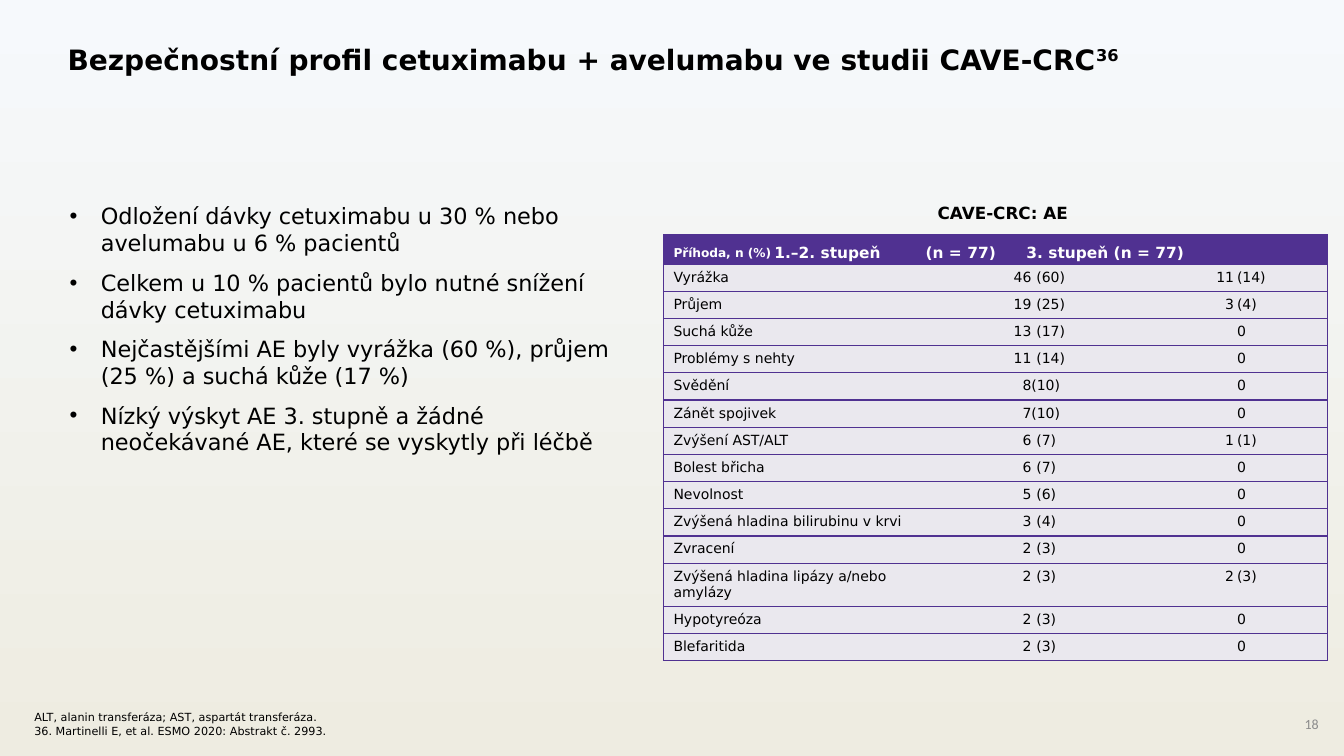
from lxml import etree
from pptx import Presentation
from pptx import util as u
from pptx.dml.color import RGBColor
from pptx.enum import text
from pptx.oxml import ns

PX = 9144
FONT = "DejaVu Sans"
BLACK = RGBColor(0x00, 0x00, 0x00)
WHITE = RGBColor(0xFF, 0xFF, 0xFF)
GREY = RGBColor(0x8C, 0x8C, 0x8C)
PURPLE = RGBColor(0x50, 0x31, 0x91)
LILAC = RGBColor(0xEA, 0xE8, 0xEE)
SKY = RGBColor(0xF6, 0xF9, 0xFC)
SAND = RGBColor(0xEE, 0xEC, 0xE1)
NO_STYLE = "{2D5ABB26-0587-4C30-8999-92F81FD0307C}"

TITLE = "Bezpečnostní profil cetuximabu + avelumabu ve studii CAVE-CRC"
FINDINGS = [
    "Odložení dávky cetuximabu u 30 % nebo avelumabu u 6 % pacientů",
    "Celkem u 10 % pacientů bylo nutné snížení dávky cetuximabu",
    "Nejčastějšími AE byly vyrážka (60 %), průjem (25 %) a suchá kůže (17 %)",
    "Nízký výskyt AE 3. stupně a žádné neočekávané AE, které se vyskytly při léčbě",
]
FOOTNOTES = [
    "ALT, alanin transferáza; AST, aspartát transferáza.",
    "36. Martinelli E, et al. ESMO 2020: Abstrakt č. 2993.",
]
EVENTS = [
    ("Vyrážka", "46", "(60)", "11", "(14)"),
    ("Průjem", "19", "(25)", "3", "(4)"),
    ("Suchá kůže", "13", "(17)", "", "0"),
    ("Problémy s nehty", "11", "(14)", "", "0"),
    ("Svědění", "8", "(10)", "", "0"),
    ("Zánět spojivek", "7", "(10)", "", "0"),
    ("Zvýšení AST/ALT", "6", "(7)", "1", "(1)"),
    ("Bolest břicha", "6", "(7)", "", "0"),
    ("Nevolnost", "5", "(6)", "", "0"),
    ("Zvýšená hladina bilirubinu v krvi", "3", "(4)", "", "0"),
    ("Zvracení", "2", "(3)", "", "0"),
    ("Zvýšená hladina lipázy a/nebo amylázy", "2", "(3)", "2", "(3)"),
    ("Hypotyreóza", "2", "(3)", "", "0"),
    ("Blefaritida", "2", "(3)", "", "0"),
]
COLUMN_WIDTHS = [271, 94, 109, 92, 93]
COLUMN_INDENTS = [10, 0, 5, 0, 3]
HEADER_HEIGHT, ROW_HEIGHT, TALL_ROW_HEIGHT = 28, 27, 43
TALL_EVENT = 11


def px(length):
    return u.Emu(length * PX)


def write(paragraph, words, size=10, bold=False, color=BLACK, font=FONT,
          baseline=0, align=text.PP_ALIGN.LEFT, before=0, indent=0, hanging=0):
    paragraph.alignment = align
    paragraph.space_before = u.Pt(before)
    properties = paragraph._p.get_or_add_pPr()
    properties.set("marL", str(px(indent)))
    properties.set("indent", str(px(-hanging)))
    if not words:
        paragraph._p.get_or_add_endParaRPr().set("sz", str(size * 100))
        return
    run = paragraph.add_run()
    run.text = words
    run.font.size = u.Pt(size)
    run.font.bold = bold
    run.font.name = font
    run.font.color.rgb = color
    if baseline:
        run.font._element.set("baseline", str(baseline * 1000))


def write_lines(frame, lines, first_before=1, before=0, **style):
    for index, line in enumerate(lines):
        paragraph = frame.add_paragraph() if index else frame.paragraphs[0]
        write(paragraph, line, before=before if index else first_before, **style)


def set_tabs(paragraph, stops):
    tabs = etree.SubElement(paragraph._p.get_or_add_pPr(), ns.qn("a:tabLst"))
    for position, side in stops:
        etree.SubElement(tabs, ns.qn("a:tab"), pos=str(px(position)), algn=side)


def place(shape, left, top, width, height):
    shape.left, shape.top = px(left), px(top)
    shape.width, shape.height = px(width), px(height)
    frame = shape.text_frame
    frame.margin_left = frame.margin_right = frame.margin_bottom = 0
    frame.margin_top = px(1)
    frame.word_wrap = True
    frame.vertical_anchor = text.MSO_ANCHOR.TOP
    frame.auto_size = text.MSO_AUTO_SIZE.SHAPE_TO_FIT_TEXT
    return frame


def add_label(slide, left, top, width, height, lines, **style):
    frame = place(slide.shapes.add_textbox(0, 0, 0, 0), left, top, width, height)
    write_lines(frame, lines, **style)


def style_cell(cell, fill):
    cell.margin_left = cell.margin_right = cell.margin_bottom = 0
    cell.margin_top = px(5)
    cell.fill.solid()
    cell.fill.fore_color.rgb = fill


def add_borders(cell, sides):
    properties = cell._tc.get_or_add_tcPr()
    for index, side in enumerate(sides):
        line = etree.Element(ns.qn(f"a:ln{side}"), w=str(u.Pt(1)))
        fill = etree.SubElement(line, ns.qn("a:solidFill"))
        etree.SubElement(fill, ns.qn("a:srgbClr"), val=str(PURPLE))
        properties.insert(index, line)


def add_header(table):
    header = table.cell(0, 0)
    header.merge(table.cell(0, 4))
    style_cell(header, PURPLE)
    paragraph = header.text_frame.paragraphs[0]
    style = dict(bold=True, color=WHITE, before=3.5, indent=10)
    write(paragraph, "Příhoda, n (%)\t", size=15, baseline=3, **style)
    write(paragraph, "1.–2. stupeň\t(n = 77)\t3. stupeň (n = 77)", size=11, **style)
    set_tabs(paragraph, [(255, "l"), (386, "l"), (647, "r")])


def add_event_table(slide, left, top):
    heights = [HEADER_HEIGHT] + [ROW_HEIGHT] * len(EVENTS)
    heights[TALL_EVENT + 1] = TALL_ROW_HEIGHT
    table = slide.shapes.add_table(
        len(heights), len(COLUMN_WIDTHS), px(left), px(top),
        px(sum(COLUMN_WIDTHS)), px(sum(heights))).table
    table.first_row = table.horz_banding = False
    table._tbl.tblPr.find(ns.qn("a:tableStyleId")).text = NO_STYLE
    for column, width in zip(table.columns, COLUMN_WIDTHS):
        column.width = px(width)
    for row, height in zip(table.rows, heights):
        row.height = px(height)
    add_header(table)
    last = len(COLUMN_WIDTHS) - 1
    for row, event in enumerate(EVENTS, 1):
        for column, value in enumerate(event):
            cell = table.cell(row, column)
            style_cell(cell, LILAC)
            if column == 0:
                cell.margin_right = px(25)
            add_borders(cell, {0: "LTB", last: "RTB"}.get(column, "TB"))
            is_count = column in (1, 3)
            indent = 0 if value == "(10)" else COLUMN_INDENTS[column]
            write(cell.text_frame.paragraphs[0], value, before=3.6, indent=indent,
                  align=text.PP_ALIGN.RIGHT if is_count else text.PP_ALIGN.LEFT)


def paint_background(slide):
    fill = slide.background.fill
    fill.gradient()
    fill.gradient_angle = 270
    for stop, color in zip(fill.gradient_stops, (SKY, SAND)):
        stop.color.rgb = color


def main():
    deck = Presentation()
    deck.slide_width, deck.slide_height = px(1333), px(750)
    slide = deck.slides.add_slide(deck.slide_layouts[1])
    paint_background(slide)

    heading = place(slide.shapes.title, 66, 41, 1216, 35).paragraphs[0]
    heading_style = dict(size=20, bold=True, before=0.9, indent=1)
    write(heading, TITLE, **heading_style)
    write(heading, "36", baseline=30, **heading_style)

    findings = place(slide.placeholders[1], 67, 200, 549, 255)
    write_lines(findings, FINDINGS, before=9, size=16, indent=33, hanging=31)

    add_event_table(slide, 658, 232)
    add_label(slide, 929, 200, 144, 23, ["CAVE-CRC: AE"], size=12, bold=True, indent=1)
    add_label(slide, 33, 704, 308, 28, FOOTNOTES, size=8, indent=1)
    add_label(slide, 1001, 709, 307, 17, ["18"], size=10, font="Calibri",
              color=GREY, align=text.PP_ALIGN.RIGHT)
    deck.save("out.pptx")


if __name__ == "__main__":
    main()
